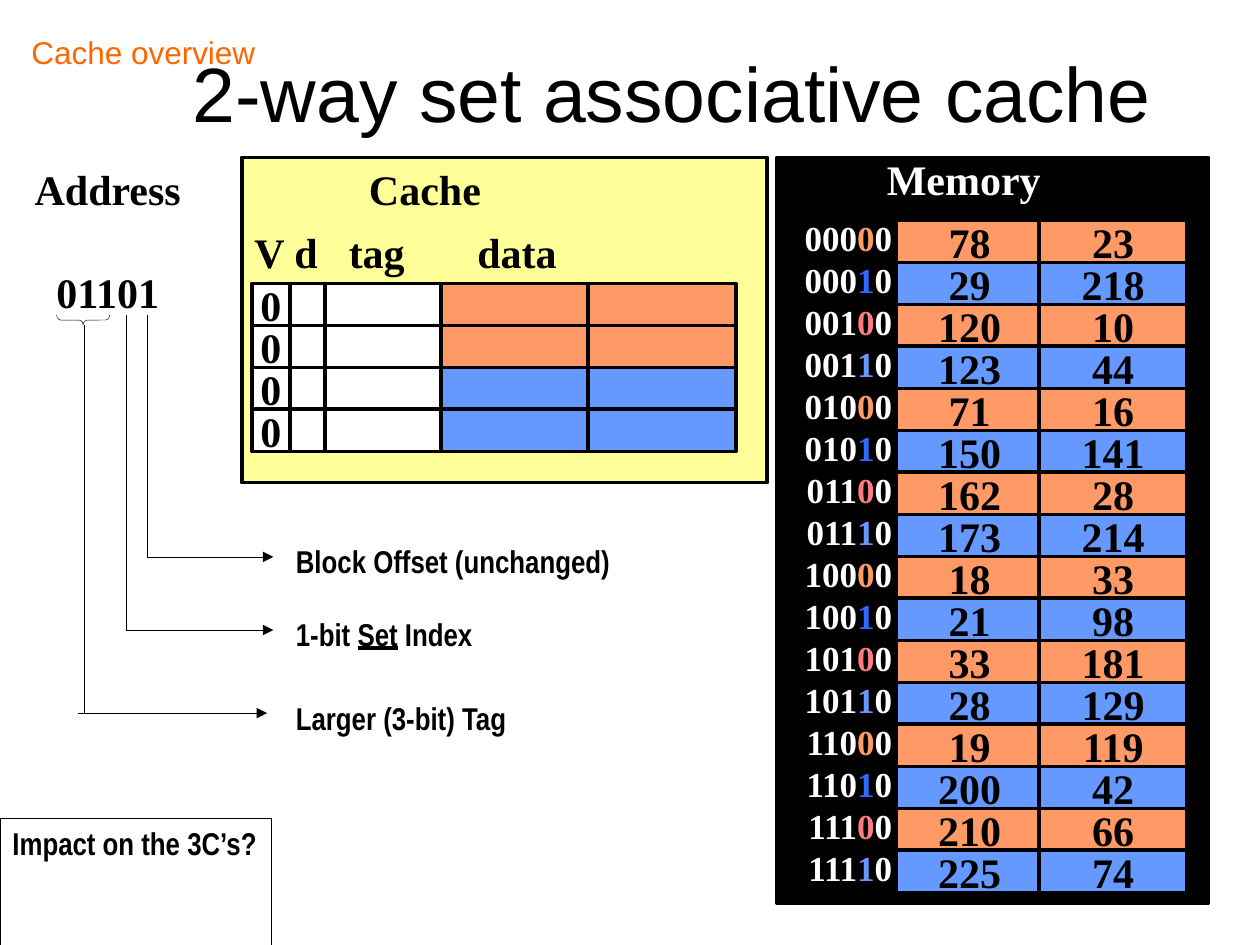
from dataclasses import dataclass

from lxml.etree import SubElement
from pptx import Presentation
from pptx.dml.color import RGBColor
from pptx.enum.shapes import MSO_CONNECTOR, MSO_SHAPE
from pptx.enum.text import MSO_ANCHOR, PP_ALIGN
from pptx.oxml.ns import qn
from pptx.util import Inches, Pt


@dataclass(frozen=True)
class Theme:
    black: str = "000000"
    white: str = "FFFFFF"
    yellow: str = "FFFF99"
    orange: str = "FF9966"
    blue: str = "6699FF"
    deep_blue: str = "3366FF"
    pink: str = "FF7C80"
    heading: str = "FF6600"
    serif: str = "Times New Roman"
    sans: str = "Arial"
    narrow: str = "Arial Narrow"
    title_size: int = 44
    value_size: int = 24
    address_size: int = 20
    label_size: int = 18
    border: float = 2.25
    hairline: float = 0.25


theme = Theme()


def add_block(left, top, width, height, fill, border=theme.border, geometry=MSO_SHAPE.RECTANGLE):
    block = slide.shapes.add_shape(geometry, Inches(left), Inches(top), Inches(width), Inches(height))
    block.shadow.inherit = False
    if fill:
        block.fill.solid()
        block.fill.fore_color.rgb = RGBColor.from_string(fill)
    else:
        block.fill.background()
    block.line.color.rgb = RGBColor.from_string(theme.black)
    block.line.width = Pt(border)
    block.text_frame.word_wrap = False
    return block


def style_runs(paragraph, face, size, color=theme.black, bold=True, align=PP_ALIGN.LEFT):
    paragraph.alignment = align
    for run in paragraph.runs:
        run.font.name = face
        run.font.size = Pt(size)
        run.font.bold = bold
        run.font.color.rgb = RGBColor.from_string(color)


presentation = Presentation()
presentation.slide_width = Inches(10)
presentation.slide_height = Inches(7.5)
slide = presentation.slides.add_slide(presentation.slide_layouts[6])

add_block(1.92, 1.25, 4.17, 2.58, theme.yellow)
add_block(6.17, 1.25, 3.42, 5.92, theme.black)

captions = [
    ("2-way set associative cache", 1.17, 0.42, 8.33, 0.61, theme.sans, theme.title_size, theme.black, False),
    ("Cache", 2.83, 1.25, 1.09, 0.5, theme.serif, theme.value_size, theme.black, True),
    ("V d\ttag\tdata", 1.92, 1.75, 3.67, 0.5, theme.serif, theme.value_size, theme.black, True),
    ("Memory", 6.94, 1.17, 1.42, 0.5, theme.serif, theme.value_size, theme.white, True),
    ("Address\n01101", 0.17, 1.25, 1.37, 1.3, theme.serif, theme.value_size, theme.black, True),
    ("Block Offset (unchanged)", 2.25, 4.25, 2.7, 0.4, theme.narrow, theme.label_size, theme.black, True),
    ("Larger (3-bit) Tag", 2.25, 5.5, 1.94, 0.4, theme.narrow, theme.label_size, theme.black, True),
    ("Cache overview", 0.15, 0.21, 1.98, 0.4, theme.sans, theme.label_size, theme.heading, False),
]
frames = {}
for text, left, top, width, height, face, size, color, bold in captions:
    frame = slide.shapes.add_textbox(Inches(left), Inches(top), Inches(width), Inches(height)).text_frame
    frame.text = text
    frame.word_wrap = "\t" in text
    for paragraph in frame.paragraphs:
        style_runs(paragraph, face, size, color, bold)
    frames[text] = frame

title_frame = frames["2-way set associative cache"]
title_frame.vertical_anchor = MSO_ANCHOR.MIDDLE
title_frame.paragraphs[0].alignment = PP_ALIGN.CENTER

address_frame = frames["Address\n01101"]
for paragraph in address_frame.paragraphs:
    paragraph.alignment = PP_ALIGN.CENTER
address_frame.paragraphs[1].space_before = Pt(30)

column_heads = frames["V d\ttag\tdata"].paragraphs[0]
tab_list = SubElement(column_heads._p.get_or_add_pPr(), qn("a:tabLst"))
for position in (0.75, 1.77):
    SubElement(tab_list, qn("a:tab"), pos=str(Inches(position)), algn="l")

set_index = slide.shapes.add_textbox(Inches(2.25), Inches(4.83), Inches(1.6), Inches(0.4)).text_frame
set_index.word_wrap = False
for text in ("1-bit ", "Set", " Index"):
    run = set_index.paragraphs[0].add_run()
    run.text = text
    run.font.underline = text == "Set"
style_runs(set_index.paragraphs[0], theme.narrow, theme.label_size)

row_height = 1 / 3
cells = []
cache_columns = [(2, 0.3), (2.3, 0.3), (2.58, 0.92), (3.5, 1.17), (4.67, 1.17)]
for row, set_color in enumerate((theme.orange, theme.orange, theme.blue, theme.blue)):
    for column, (left, width) in enumerate(cache_columns):
        fill = set_color if column > 2 else theme.white
        cells.append((left, 2.25 + row * row_height, width, fill, "0" if column == 0 else ""))

memory = [
    (78, 23), (29, 218), (120, 10), (123, 44), (71, 16), (150, 141), (162, 28), (173, 214),
    (18, 33), (21, 98), (33, 181), (28, 129), (19, 119), (200, 42), (210, 66), (225, 74),
]
for row, values in enumerate(memory):
    fill = theme.blue if row % 2 else theme.orange
    for left, value in zip((7.11, 8.25), values):
        cells.append((left, 1.75 + row * row_height, 1.17, fill, str(value)))

for left, top, width, fill, value in cells:
    cell = add_block(left, top, width, row_height, fill)
    if value:
        cell.text_frame.text = value
        cell.text_frame.vertical_anchor = MSO_ANCHOR.MIDDLE
        style_runs(cell.text_frame.paragraphs[0], theme.serif, theme.value_size, align=PP_ALIGN.CENTER)

addresses = slide.shapes.add_textbox(Inches(6.28), Inches(1.67), Inches(0.9), Inches(5.43)).text_frame
addresses.word_wrap = False
index_colors = (theme.orange, theme.deep_blue, theme.pink, theme.blue)
for row in range(len(memory)):
    paragraph = addresses.paragraphs[0] if row == 0 else addresses.add_paragraph()
    paragraph.line_spacing = Pt(24)
    address = f"{row * 2:05b}"
    for text in (address[:3], address[3], address[4]):
        paragraph.add_run().text = text
    style_runs(paragraph, theme.serif, theme.address_size, theme.white, align=PP_ALIGN.RIGHT)
    paragraph.runs[1].font.color.rgb = RGBColor.from_string(index_colors[row % 4])

tag_brace = add_block(0.62, 2.33, 0.08, 0.42, None, theme.hairline, MSO_SHAPE.LEFT_BRACE)
tag_brace.rotation = 270
tag_brace.adjustments[0] = 0.417

pointers = [
    (1.17, 2.5, 1.17, 4.42), (1.17, 4.42, 2.17, 4.42),
    (1, 2.5, 1, 5), (1, 5, 2.17, 5),
    (0.67, 2.58, 0.67, 5.67), (0.62, 5.66, 2.12, 5.66),
]
for x1, y1, x2, y2 in pointers:
    pointer = slide.shapes.add_connector(MSO_CONNECTOR.STRAIGHT, Inches(x1), Inches(y1), Inches(x2), Inches(y2))
    pointer.line.color.rgb = RGBColor.from_string(theme.black)
    pointer.line.width = Pt(theme.hairline)
    if y1 == y2:
        SubElement(pointer.line._get_or_add_ln(), qn("a:tailEnd"), type="triangle")
    SubElement(pointer._element.spPr, qn("a:effectLst"))

impact = add_block(0, 6.49, 2.15, 1.01, None, theme.hairline).text_frame
impact.text = "Impact on the 3C’s?"
impact.vertical_anchor = MSO_ANCHOR.TOP
style_runs(impact.paragraphs[0], theme.narrow, theme.label_size)

presentation.save("out.pptx")
